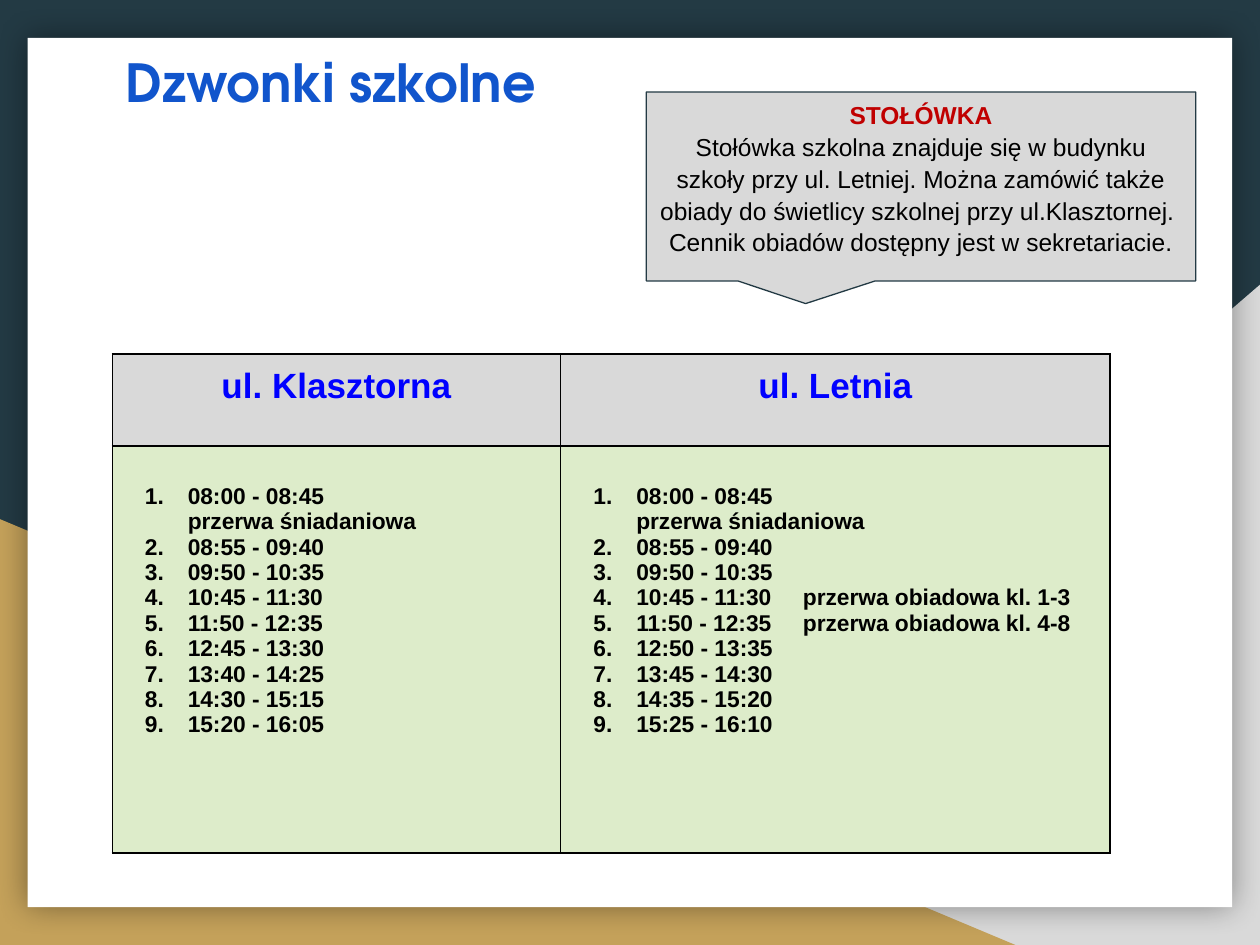
from lxml.etree import SubElement
from pptx import Presentation
from pptx.dml.color import RGBColor
from pptx.enum.shapes import MSO_SHAPE
from pptx.enum.text import MSO_ANCHOR, PP_ALIGN
from pptx.oxml.ns import qn
from pptx.util import Inches, Pt

NAVY = RGBColor(0x23, 0x3A, 0x44)
GREY = RGBColor(0xD9, 0xD9, 0xD9)
GOLD = RGBColor(0xC4, 0xA1, 0x5A)
WHITE = RGBColor(0xFF, 0xFF, 0xFF)
BLACK = RGBColor(0, 0, 0)
GREEN = RGBColor(0xDD, 0xEC, 0xCA)
TITLE_BLUE = RGBColor(0x11, 0x55, 0xCC)
HEADER_BLUE = RGBColor(0, 0, 0xFF)
RED = RGBColor(0xC0, 0, 0)

WIDTH, HEIGHT = Inches(10), Inches(7.5)
COLUMNS, ROWS = 1000, 750

TITLE_FONT = dict(name="TeX Gyre Adventor", size=Pt(30), bold=True)
HEADER_FONT = dict(name="Arial", size=Pt(20), bold=True)
LESSON_FONT = dict(name="Arial", size=Pt(13), bold=True)
NOTICE_HEAD_FONT = dict(name="Arial", size=Pt(14), bold=True)
NOTICE_FONT = dict(name="Arial", size=Pt(14), bold=False)

BREAKFAST = "\vprzerwa śniadaniowa"
BELLS = {
    "ul. Klasztorna": [
        "08:00 - 08:45" + BREAKFAST, "08:55 - 09:40", "09:50 - 10:35",
        "10:45 - 11:30", "11:50 - 12:35", "12:45 - 13:30",
        "13:40 - 14:25", "14:30 - 15:15", "15:20 - 16:05",
    ],
    "ul. Letnia": [
        "08:00 - 08:45" + BREAKFAST, "08:55 - 09:40", "09:50 - 10:35",
        "10:45 - 11:30|przerwa obiadowa kl. 1-3",
        "11:50 - 12:35|przerwa obiadowa kl. 4-8", "12:50 - 13:35",
        "13:45 - 14:30", "14:35 - 15:20", "15:25 - 16:10",
    ],
}
NOTICE = [
    ("STOŁÓWKA", NOTICE_HEAD_FONT, RED),
    ("Stołówka szkolna znajduje się w budynku szkoły przy ul. Letniej. "
     "Można zamówić także obiady do świetlicy szkolnej przy ul.Klasztornej. ",
     NOTICE_FONT, BLACK),
    ("Cennik obiadów dostępny jest w sekretariacie.", NOTICE_FONT, BLACK),
]


def grid(column, row, columns, rows):
    """Turn a place on the slide's grid into left, top, width and height."""
    return (WIDTH * column // COLUMNS, HEIGHT * row // ROWS,
            WIDTH * columns // COLUMNS, HEIGHT * rows // ROWS)


def apply(target, values):
    for key, value in values.items():
        setattr(target, key, value)


def add_panel(slide, kind, place, fill, line=None):
    panel = slide.shapes.add_shape(kind, *grid(*place))
    panel.shadow.inherit = False
    panel.fill.solid()
    panel.fill.fore_color.rgb = fill
    if line is None:
        panel.line.fill.background()
    else:
        panel.line.color.rgb = line
        panel.line.width = Pt(0.75)
    return panel


def add_glow(panel):
    """Give the panel a soft, even shadow on all sides."""
    effects = panel._element.spPr.find(qn("a:effectLst"))
    glow = SubElement(effects, qn("a:outerShdw"), blurRad=str(Pt(18)),
                      dist="0", dir="0", algn="ctr", rotWithShape="0")
    color = SubElement(glow, qn("a:srgbClr"), val=str(BLACK))
    SubElement(color, qn("a:alpha"), val="40000")


def write(paragraph, text, font, color, align=PP_ALIGN.LEFT):
    paragraph.alignment = align
    for index, line in enumerate(text.split("\v")):
        if index:
            paragraph.add_line_break()
        run = paragraph.add_run()
        run.text = line
        apply(run.font, font)
        run.font.color.rgb = color


def paragraphs(frame, count):
    return [frame.paragraphs[0]] + [frame.add_paragraph() for _ in range(count - 1)]


def number(paragraph):
    properties = paragraph._p.get_or_add_pPr()
    properties.set("marL", str(Inches(0.5)))
    properties.set("indent", str(-Inches(0.34)))
    color = SubElement(properties, qn("a:buClr"))
    SubElement(color, qn("a:srgbClr"), val=str(BLACK))
    SubElement(properties, qn("a:buFont"), typeface="Arial")
    SubElement(properties, qn("a:buAutoNum"), type="arabicPeriod")


def write_lesson(paragraph, lesson):
    """Number a lesson; a note after the bar stands apart by a widened space."""
    number(paragraph)
    hours, _, note = lesson.partition("|")
    write(paragraph, hours, LESSON_FONT, BLACK)
    if note:
        write(paragraph, " ", LESSON_FONT, BLACK)
        paragraph.runs[-1].font._element.set("spc", "1450")
        write(paragraph, note, LESSON_FONT, BLACK)


def format_cell(cell, fill, top):
    properties = cell._tc.get_or_add_tcPr()
    for side in ("lnL", "lnR", "lnT", "lnB"):
        border = SubElement(properties, qn("a:" + side), w=str(Pt(0.75)))
        paint = SubElement(border, qn("a:solidFill"))
        SubElement(paint, qn("a:srgbClr"), val=str(BLACK))
    cell.fill.solid()
    cell.fill.fore_color.rgb = fill
    apply(cell, dict(margin_left=Inches(0.1), margin_right=Inches(0.1),
                     margin_top=top, margin_bottom=Inches(0.1),
                     vertical_anchor=MSO_ANCHOR.TOP))


def add_background(slide):
    slide.background.fill.solid()
    slide.background.fill.fore_color.rgb = NAVY
    corner = add_panel(slide, MSO_SHAPE.RIGHT_TRIANGLE, (392, 226, 608, 524), GREY)
    corner._element.spPr.xfrm.set("flipH", "1")
    add_panel(slide, MSO_SHAPE.RIGHT_TRIANGLE, (0, 412, 806, 338), GOLD)
    add_glow(add_panel(slide, MSO_SHAPE.RECTANGLE, (22, 30, 956, 690), WHITE))


def add_title(slide, text):
    frame = slide.shapes.add_textbox(*grid(90, 35, 400, 60)).text_frame
    apply(frame, dict(word_wrap=True, vertical_anchor=MSO_ANCHOR.MIDDLE))
    write(frame.paragraphs[0], text, TITLE_FONT, TITLE_BLUE)


def add_bell_table(slide):
    table = slide.shapes.add_table(2, len(BELLS), *grid(89, 281, 792, 396)).table
    apply(table, dict(first_row=False, horz_banding=False))
    for row, height in zip(table.rows, (0.73, 3.23)):
        row.height = Inches(height)
    for index, (width, street) in enumerate(zip((3.56, 4.36), BELLS)):
        table.columns[index].width = Inches(width)
        header, body = table.cell(0, index), table.cell(1, index)
        format_cell(header, GREY, Inches(0.1))
        format_cell(body, GREEN, Inches(0.3))
        write(header.text_frame.paragraphs[0], street, HEADER_FONT,
              HEADER_BLUE, PP_ALIGN.CENTER)
        lessons = BELLS[street]
        for paragraph, lesson in zip(paragraphs(body.text_frame, len(lessons)), lessons):
            write_lesson(paragraph, lesson)


def add_notice(slide):
    callout = add_panel(slide, MSO_SHAPE.RECTANGULAR_CALLOUT,
                        (513, 73, 436, 150), GREY, NAVY)
    callout.adjustments[0], callout.adjustments[1] = -0.21, 0.62
    frame = callout.text_frame
    apply(frame, dict(word_wrap=True, vertical_anchor=MSO_ANCHOR.TOP,
                      margin_left=Inches(0.1), margin_right=Inches(0.1),
                      margin_top=Inches(0.05), margin_bottom=Inches(0.1)))
    for paragraph, (text, font, color) in zip(paragraphs(frame, len(NOTICE)), NOTICE):
        write(paragraph, text, font, color, PP_ALIGN.CENTER)
        paragraph.line_spacing = 1.08


def main():
    presentation = Presentation()
    apply(presentation, dict(slide_width=WIDTH, slide_height=HEIGHT))
    slide = presentation.slides.add_slide(presentation.slide_layouts[6])
    add_background(slide)
    add_title(slide, "Dzwonki szkolne")
    add_bell_table(slide)
    add_notice(slide)
    presentation.save("out.pptx")


if __name__ == "__main__":
    main()
